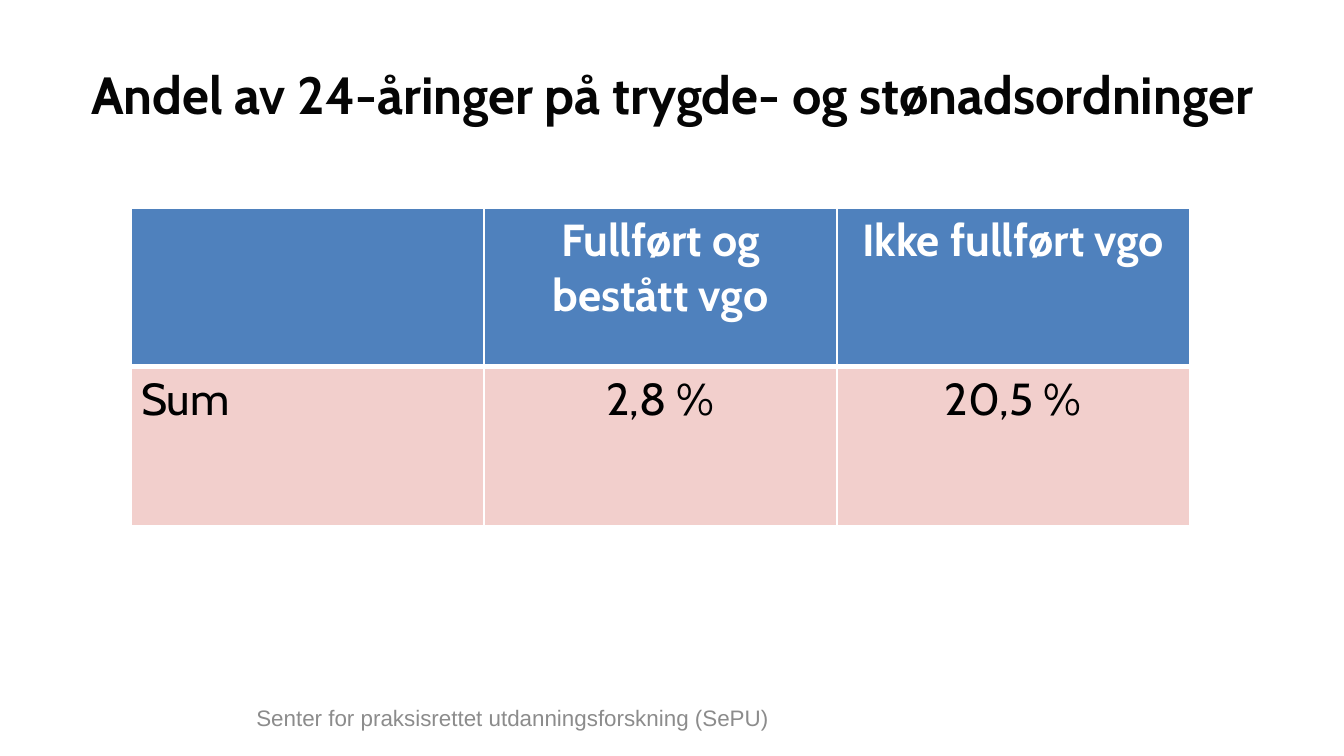
from lxml import etree
from pptx import Presentation
from pptx.dml.color import RGBColor
from pptx.enum.text import MSO_ANCHOR, PP_ALIGN
from pptx.oxml.ns import qn
from pptx.util import Inches, Pt

CENTER, LEFT = PP_ALIGN.CENTER, PP_ALIGN.LEFT
MIDDLE = MSO_ANCHOR.MIDDLE

TITLE = "Andel av 24-åringer på trygde- og stønadsordninger"
FOOTER = "Senter for praksisrettet utdanningsforskning (SePU)"
ROWS = [
    ["", "Fullført og bestått vgo", "Ikke fullført vgo"],
    ["Sum", "2,8 %", "20,5 %"],
]
COLORS = {
    "title": "050505",
    "header": "4F81BD",
    "body": "F2CFCC",
    "white": "FFFFFF",
    "black": "000000",
    "footer": "8C8C8C",
}
PAGE_WIDTH = 10
PAGE_HEIGHT = PAGE_WIDTH * 9 / 16


def write_text(frame, text, size, color, font="Cabin", bold=False, align=CENTER):
    frame.word_wrap = True
    para = frame.paragraphs[0]
    para.alignment = align
    span = para.add_run()
    span.text = text
    span.font.size = Pt(size)
    span.font.name = font
    span.font.bold = bold
    span.font.color.rgb = RGBColor.from_string(COLORS[color])


def place(shape, left, top, width, height):
    shape.left, shape.top = Inches(left), Inches(top)
    shape.width, shape.height = Inches(width), Inches(height)


def add_borders(cell, top, bottom):
    properties = cell._tc.get_or_add_tcPr()
    for side, width in (("L", 1), ("R", 1), ("T", top), ("B", bottom)):
        line = etree.SubElement(properties, qn(f"a:ln{side}"), w=str(Pt(width)))
        fill = etree.SubElement(line, qn("a:solidFill"))
        etree.SubElement(fill, qn("a:srgbClr"), val=COLORS["white"])


def add_share_table(page):
    table = page.shapes.add_table(
        len(ROWS), len(ROWS[0]),
        Inches(0.98), Inches(1.55), Inches(7.87), Inches(2.36),
    ).table
    for row_index, row in enumerate(ROWS):
        header = row_index == 0
        for column_index, text in enumerate(row):
            cell = table.cell(row_index, column_index)
            cell.margin_left = cell.margin_right = Inches(0.07)
            cell.margin_top = cell.margin_bottom = Inches(0.04)
            add_borders(cell, top=1 if header else 3, bottom=3 if header else 1)
            cell.fill.solid()
            fill_name = "header" if header else "body"
            cell.fill.fore_color.rgb = RGBColor.from_string(COLORS[fill_name])
            if text:
                write_text(
                    cell.text_frame, text, 24, "white" if header else "black",
                    bold=header, align=CENTER if column_index else LEFT,
                )


def main():
    deck = Presentation()
    deck.slide_width, deck.slide_height = Inches(PAGE_WIDTH), Inches(PAGE_HEIGHT)
    page = deck.slides.add_slide(deck.slide_layouts[5])

    title = page.shapes.title
    place(title, 0.5, 0.23, 9, 0.94)
    title.text_frame.vertical_anchor = MIDDLE
    write_text(title.text_frame, TITLE, 28, "title", bold=True)

    add_share_table(page)

    footer = page.shapes.add_textbox(0, 0, 0, 0)
    place(footer, 1.54, 5.23, 4.55, 0.22)
    footer.text_frame.vertical_anchor = MIDDLE
    write_text(footer.text_frame, FOOTER, 12, "footer", font="Arial")

    deck.save("out.pptx")


if __name__ == "__main__":
    main()
